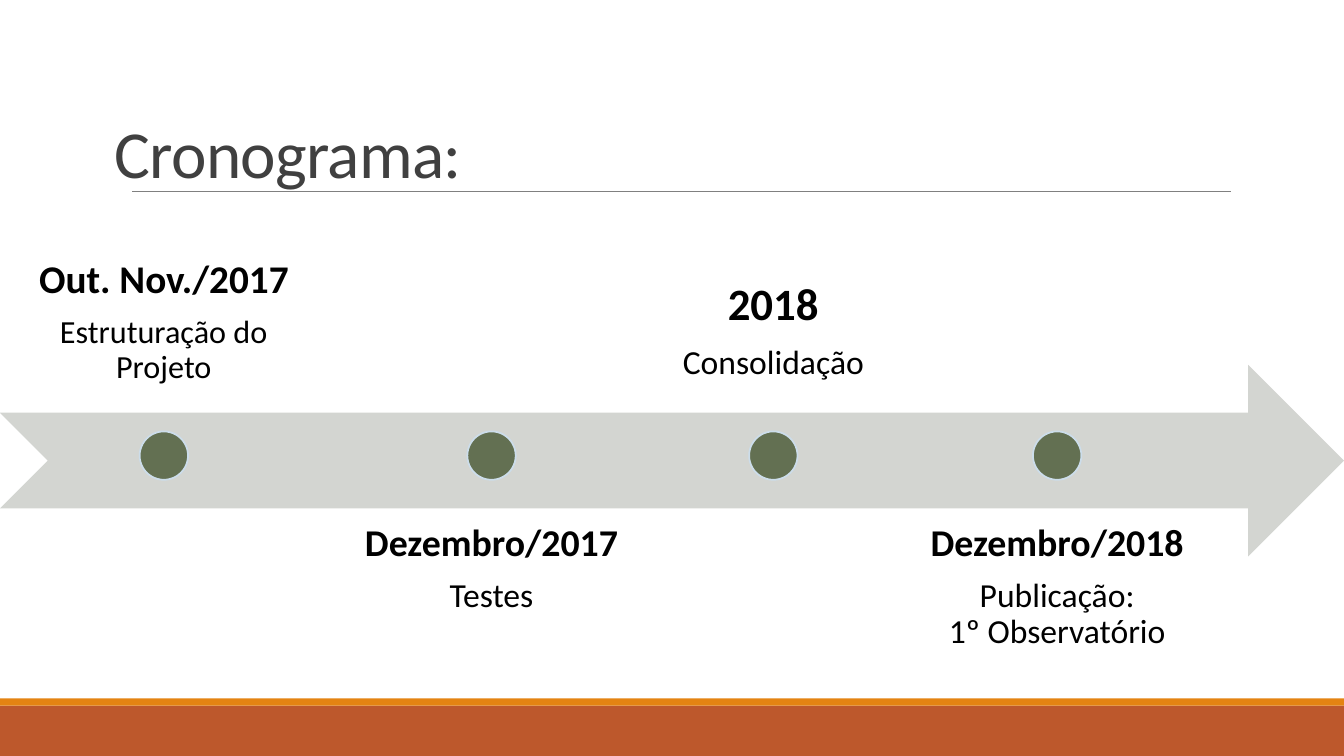
from lxml import etree
from pptx import Presentation
from pptx.dml.color import RGBColor
from pptx.enum.shapes import MSO_CONNECTOR, MSO_SHAPE
from pptx.enum.text import MSO_ANCHOR, PP_ALIGN
from pptx.oxml.ns import qn
from pptx.util import Inches, Pt

RECTANGLE, OVAL = MSO_SHAPE.RECTANGLE, MSO_SHAPE.OVAL
NOTCHED_ARROW = MSO_SHAPE.NOTCHED_RIGHT_ARROW
STRAIGHT = MSO_CONNECTOR.STRAIGHT
TOP, BOTTOM = MSO_ANCHOR.TOP, MSO_ANCHOR.BOTTOM
LEFT, CENTER = PP_ALIGN.LEFT, PP_ALIGN.CENTER

WIDTH, HEIGHT = 13.33, 7.5
FONT = "Calibri"
COLORS = {
    "rust": "BD582C", "orange": "E48312", "rule": "808080",
    "title": "404040", "text": "000000", "arrow": "D3D5D1",
    "dot": "637052", "dot_line": "CCDDEA",
}
LABEL_HEIGHT = 1.9
DOT_SIZE = 0.48
DOT_TOP = 0.66  # below the top of the arrow
ABOVE, BELOW = -1.48, 1.37  # label tops relative to the arrow

# left, width, label offset, inset, date, date size, task, task size
MILESTONES = [
    (0, 3.25, ABOVE, 0.22, "Out. Nov./2017", 28, "Estruturação do Projeto", 23),
    (3.37, 3.01, BELOW, 0.21, "Dezembro/2017", 27, "Testes", 24),
    (6.49, 2.36, ABOVE, 0.25, "2018", 32, "Consolidação", 24),
    (8.97, 3.03, BELOW, 0.21, "Dezembro/2018", 27,
     "Publicação:\n1º Observatório", 24),
]


def rgb(name):
    return RGBColor.from_string(COLORS[name])


def add_filled_shape(slide, kind, box, fill, line=None):
    shape = slide.shapes.add_shape(kind, *map(Inches, box))
    shape.shadow.inherit = False
    shape.fill.solid()
    shape.fill.fore_color.rgb = rgb(fill)
    if line:
        shape.line.color.rgb = rgb(line)
        shape.line.width = Pt(1.25)
    else:
        shape.line.fill.background()


def add_text_frame(slide, box, anchor, inset_x, inset_y):
    frame = slide.shapes.add_textbox(*map(Inches, box)).text_frame
    settings = {
        "word_wrap": True, "vertical_anchor": anchor,
        "margin_left": Inches(inset_x), "margin_right": Inches(inset_x),
        "margin_top": Inches(inset_y), "margin_bottom": Inches(inset_y),
    }
    for name, value in settings.items():
        setattr(frame, name, value)
    return frame


def write_paragraph(paragraph, text, size, color, spacing, alignment, bold=False):
    paragraph.text = text
    paragraph.line_spacing = spacing
    paragraph.alignment = alignment
    for run in paragraph.runs:
        settings = {"name": FONT, "size": Pt(size), "bold": bold}
        for name, value in settings.items():
            setattr(run.font, name, value)
        run.font.color.rgb = rgb(color)


def add_footer_bands(slide, left, top, width, height):
    stripe = 0.07
    add_filled_shape(slide, RECTANGLE, (left, top + stripe, width, height - stripe), "rust")
    add_filled_shape(slide, RECTANGLE, (left, top, width, stripe), "orange")


def add_title(slide, left, top, width, height):
    # Rule under the title
    rule_left, rule_top = left + 0.27, top + 1.53
    rule = slide.shapes.add_connector(
        STRAIGHT, Inches(rule_left), Inches(rule_top),
        Inches(rule_left + 10.9), Inches(rule_top))
    rule.line.color.rgb = rgb("rule")
    rule.line.width = Pt(0.5)
    etree.SubElement(rule._element.spPr, qn("a:effectLst"))

    # Title text, slightly tightened
    frame = add_text_frame(slide, (left, top, width, height), BOTTOM, 0.1, 0.05)
    paragraph = frame.paragraphs[0]
    write_paragraph(paragraph, "Cronograma:", 48, "title", 0.85, LEFT)
    paragraph.runs[0].font._element.set("spc", "-50")


def add_milestone(slide, arrow_top, milestone):
    left, width, offset, inset, date, date_size, task, task_size = milestone
    # Date and task
    anchor = BOTTOM if offset == ABOVE else TOP
    frame = add_text_frame(
        slide, (left, arrow_top + offset, width, LABEL_HEIGHT), anchor, inset, inset)
    heading = frame.paragraphs[0]
    write_paragraph(heading, date, date_size, "text", 0.9, CENTER, True)
    heading.space_after = Pt(round(date_size * 0.35, 1))
    write_paragraph(frame.add_paragraph(), task, task_size, "text", 0.9, CENTER)

    # Marker centred on the label
    dot_left = left + (width - DOT_SIZE) / 2
    add_filled_shape(
        slide, OVAL, (dot_left, arrow_top + DOT_TOP, DOT_SIZE, DOT_SIZE), "dot", "dot_line")


def add_timeline(slide, left, top, width, height):
    add_filled_shape(slide, NOTCHED_ARROW, (left, top, width, height), "arrow")
    for milestone in MILESTONES:
        add_milestone(slide, top, milestone)


def main():
    presentation = Presentation()
    presentation.slide_width = Inches(WIDTH)
    presentation.slide_height = Inches(HEIGHT)
    slide = presentation.slides.add_slide(presentation.slide_layouts[6])
    add_footer_bands(slide, 0, 6.93, WIDTH, 0.57)
    add_title(slide, 1.04, 0.37, 11, 1.59)
    add_timeline(slide, 0, 3.62, WIDTH, 1.9)
    presentation.save("out.pptx")


if __name__ == "__main__":
    main()
